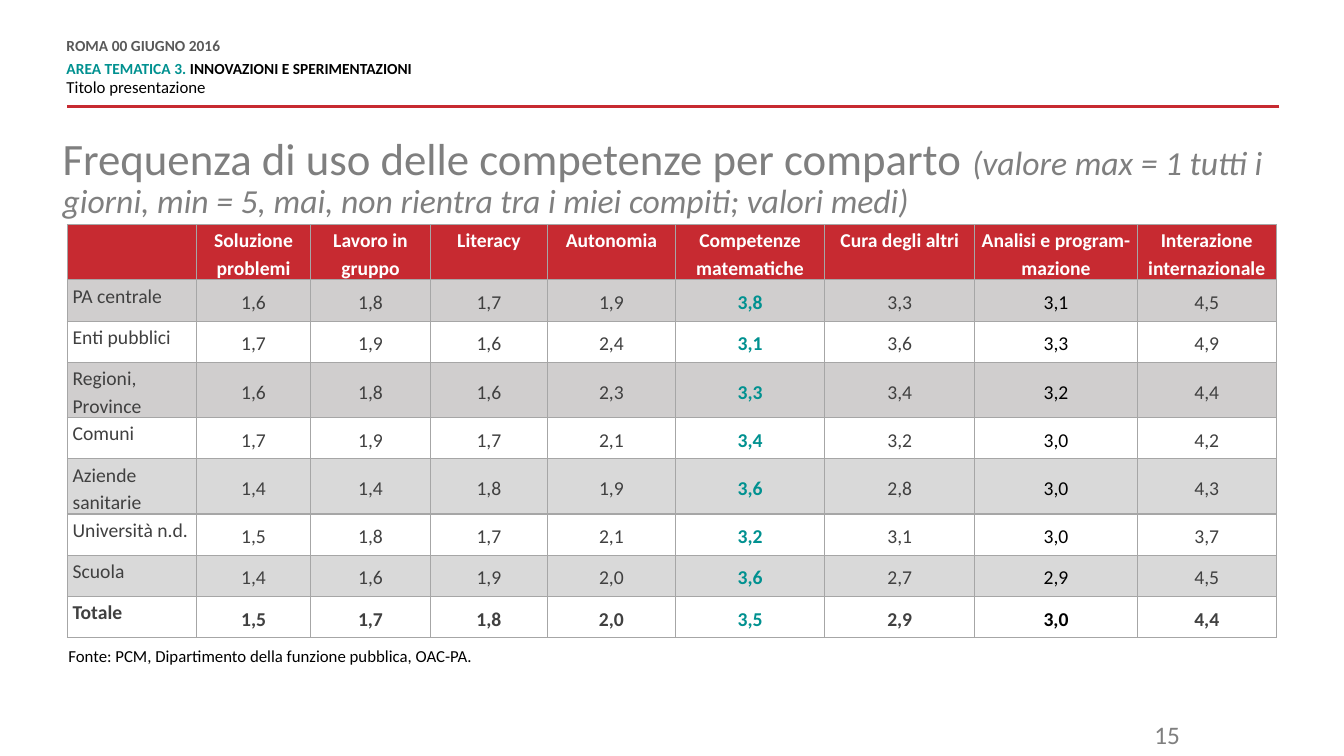
from dataclasses import dataclass
from typing import Any

from pptx import Presentation
from pptx.dml.color import RGBColor as Rgb
from pptx.enum.shapes import MSO_CONNECTOR as Connector
from pptx.enum.text import MSO_ANCHOR as Anchor, MSO_AUTO_SIZE as AutoSize, PP_ALIGN as Align
from pptx.oxml.ns import qn
from pptx.util import Inches, Pt
from lxml.etree import SubElement


@dataclass(frozen=True)
class Theme:
    font: str = "Calibri"
    red: str = "C72A31"
    teal: str = "009190"
    black: str = "000000"
    white: str = "FFFFFF"
    body: str = "404040"
    date: str = "595959"
    title: str = "7F7F7F"
    border: str = "A6A6A6"
    warm_band: str = "D0CECE"
    cool_band: str = "D9D9D9"
    title_size: int = 32
    subtitle_size: int = 24
    number_size: int = 18
    table_size: int = 14
    small_size: int = 12
    header_size: int = 11


THEME = Theme()


@dataclass(frozen=True)
class Run:
    text: str
    size: int
    color: str
    bold: bool = False
    italic: bool = False


@dataclass(frozen=True)
class Para:
    runs: list[Run]
    format: dict[str, Any]


@dataclass(frozen=True)
class TextBox:
    box: tuple[float, float, float, float]
    paras: list[Para]
    frame: dict[str, Any]


@dataclass(frozen=True)
class Sector:
    name: str
    means: str
    fill: str
    bold: bool = False


def apply(target: Any, values: dict[str, Any]) -> None:
    for attribute, value in values.items():
        setattr(target, attribute, value)


def write_para(paragraph: Any, para: Para) -> None:
    apply(paragraph, para.format)
    for run in para.runs:
        piece = paragraph.add_run()
        piece.text = run.text
        apply(piece.font, {"name": THEME.font, "size": Pt(run.size),
                           "bold": run.bold, "italic": run.italic})
        piece.font.color.rgb = Rgb.from_string(run.color)


def draw_text(slide: Any, item: TextBox) -> None:
    frame = slide.shapes.add_textbox(*map(Inches, item.box)).text_frame
    apply(frame, {"word_wrap": True, **item.frame})
    for index, para in enumerate(item.paras):
        write_para(frame.paragraphs[0] if index == 0 else frame.add_paragraph(), para)


def draw_header_rule(slide: Any) -> None:
    rule = slide.shapes.add_connector(
        Connector.STRAIGHT, Inches(12.69), Inches(1.06), Inches(0.66), Inches(1.06))
    rule.line.color.rgb = Rgb.from_string(THEME.red)
    rule.line.width = Pt(2)
    SubElement(rule._element.spPr, qn("a:effectLst"))


def draw_cell(cell: Any, run: Run, fill: str, align: Align, anchor: Anchor, side: float) -> None:
    """Fill a cell; borders come first because the schema puts them before the fill."""
    properties = cell._tc.get_or_add_tcPr()
    for edge in ("lnL", "lnR", "lnT", "lnB"):
        line = SubElement(properties, qn(f"a:{edge}"), w=str(Pt(1)))
        SubElement(SubElement(line, qn("a:solidFill")), qn("a:srgbClr"), val=THEME.border)
    cell.fill.solid()
    cell.fill.fore_color.rgb = Rgb.from_string(fill)
    apply(cell, {"vertical_anchor": anchor, "margin_left": Inches(side), "margin_top": Inches(0.01),
                 "margin_right": Inches(side), "margin_bottom": 0})
    runs = [run] if run.text else []
    write_para(cell.text_frame.paragraphs[0],
               Para(runs, {"alignment": align, "line_spacing": 1.15}))


SKILLS = ["", "Soluzione problemi", "Lavoro in gruppo", "Literacy", "Autonomia",
          "Competenze matematiche", "Cura degli altri", "Analisi e program-mazione",
          "Interazione internazionale"]
WIDTHS = [1.28, 1.13, 1.19, 1.16, 1.27, 1.48, 1.49, 1.61, 1.38]
SKILL_COLORS = {"Competenze matematiche": THEME.teal, "Analisi e program-mazione": THEME.black}
HIGHLIGHT = "Competenze matematiche"
SECTORS = [
    Sector("PA centrale", "1,6 1,8 1,7 1,9 3,8 3,3 3,1 4,5", THEME.warm_band),
    Sector("Enti pubblici", "1,7 1,9 1,6 2,4 3,1 3,6 3,3 4,9", THEME.white),
    Sector("Regioni, Province", "1,6 1,8 1,6 2,3 3,3 3,4 3,2 4,4", THEME.warm_band),
    Sector("Comuni", "1,7 1,9 1,7 2,1 3,4 3,2 3,0 4,2", THEME.white),
    Sector("Aziende sanitarie", "1,4 1,4 1,8 1,9 3,6 2,8 3,0 4,3", THEME.cool_band),
    Sector("Università n.d.", "1,5 1,8 1,7 2,1 3,2 3,1 3,0 3,7", THEME.white),
    Sector("Scuola", "1,4 1,6 1,9 2,0 3,6 2,7 2,9 4,5", THEME.cool_band),
    Sector("Totale", "1,5 1,7 1,8 2,0 3,5 2,9 3,0 4,4", THEME.white, bold=True),
]


def draw_skill_table(slide: Any) -> None:
    table = slide.shapes.add_table(len(SECTORS) + 1, len(SKILLS), Inches(0.67), Inches(2.23),
                                   Inches(sum(WIDTHS)), Inches(4.1)).table
    apply(table, {"first_row": False, "horz_banding": False})
    for column, width in zip(table.columns, WIDTHS):
        column.width = Inches(width)
    for row in table.rows:
        row.height = Inches(0.41)
    size = THEME.table_size
    for col, skill in enumerate(SKILLS):
        draw_cell(table.cell(0, col), Run(skill, size, THEME.white, True),
                  THEME.red, Align.CENTER, Anchor.TOP, 0.05)
    for row, sector in enumerate(SECTORS, 1):
        draw_cell(table.cell(row, 0), Run(sector.name, size, THEME.body, sector.bold),
                  sector.fill, Align.LEFT, Anchor.TOP, 0.05)
        for col, mean in enumerate(sector.means.split(), 1):
            skill = SKILLS[col]
            run = Run(mean, size, SKILL_COLORS.get(skill, THEME.body),
                      sector.bold or skill == HIGHLIGHT)
            draw_cell(table.cell(row, col), run, sector.fill, Align.CENTER, Anchor.MIDDLE, 0.01)


NO_MARGINS = {"margin_left": 0, "margin_top": 0, "margin_right": 0, "margin_bottom": 0}
HEADER_LINE = {"line_spacing": Pt(10.8)}
TEXTS = [
    TextBox((0.66, 0.39, 8.34, 0.59), [
        Para([Run("ROMA 00 GIUGNO 2016", THEME.header_size, THEME.date, True)],
             {**HEADER_LINE, "space_after": Pt(6)}),
        Para([Run("AREA TEMATICA 3. ", THEME.header_size, THEME.teal, True),
              Run("INNOVAZIONI E SPERIMENTAZIONI", THEME.header_size, THEME.black, True)],
             HEADER_LINE),
        Para([Run("Titolo presentazione", THEME.small_size, THEME.black)],
             {**HEADER_LINE, "space_before": Pt(3), "space_after": Pt(6)}),
    ], {**NO_MARGINS, "auto_size": AutoSize.SHAPE_TO_FIT_TEXT}),
    TextBox((0.62, 1.21, 12.11, 1.13), [
        Para([Run("Frequenza di uso delle competenze per comparto ",
                  THEME.title_size, THEME.title),
              Run("(valore max = 1 tutti i giorni, min = 5, mai, non rientra tra i miei "
                  "compiti; valori medi)", THEME.subtitle_size, THEME.title, italic=True)],
             {"line_spacing": 0.9}),
    ], {**NO_MARGINS, "vertical_anchor": Anchor.MIDDLE}),
    TextBox((8.8, 7.09, 3, 0.4), [
        Para([Run("15", THEME.number_size, THEME.title)], {"alignment": Align.RIGHT}),
    ], {}),
    TextBox((0.58, 6.36, 4.33, 0.3), [
        Para([Run("Fonte: PCM, Dipartimento della funzione pubblica, OAC-PA.",
                  THEME.small_size, THEME.black)], {}),
    ], {"word_wrap": False, "auto_size": AutoSize.SHAPE_TO_FIT_TEXT}),
]


def main() -> None:
    deck = Presentation()
    apply(deck, {"slide_width": Inches(13.33), "slide_height": Inches(7.5)})
    slide = deck.slides.add_slide(deck.slide_layouts[6])
    draw_header_rule(slide)
    for item in TEXTS:
        draw_text(slide, item)
    draw_skill_table(slide)
    deck.save("out.pptx")


if __name__ == "__main__":
    main()
